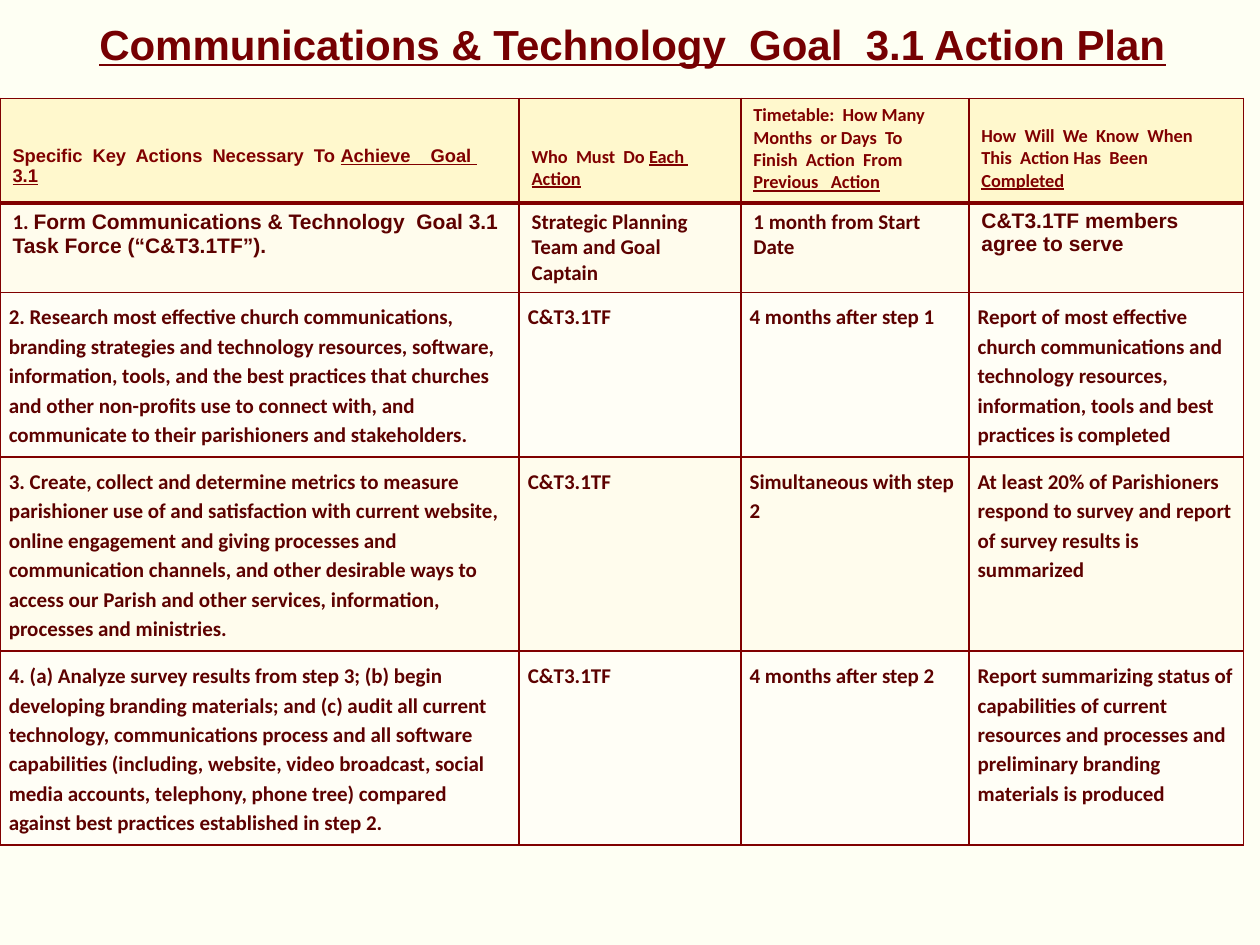
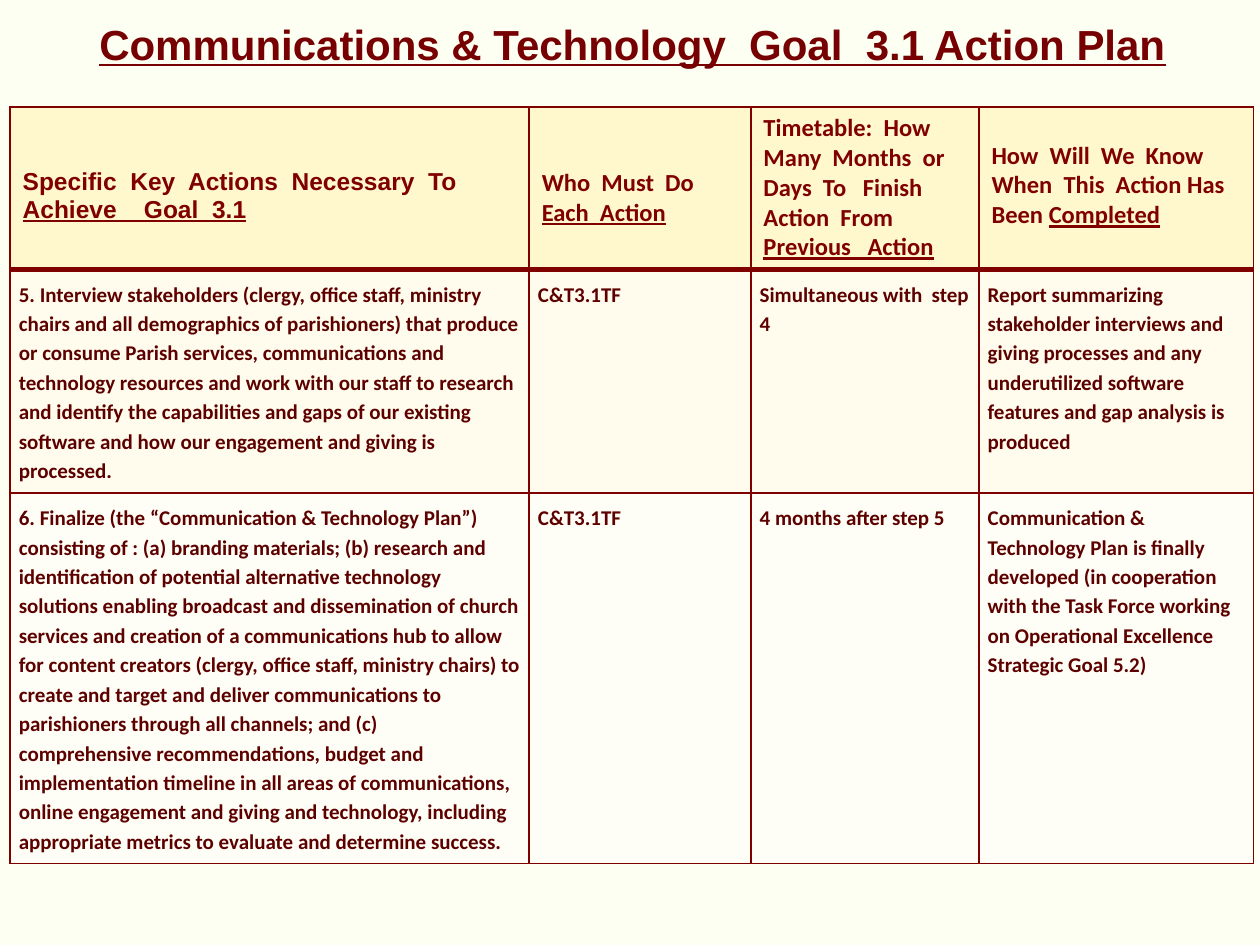
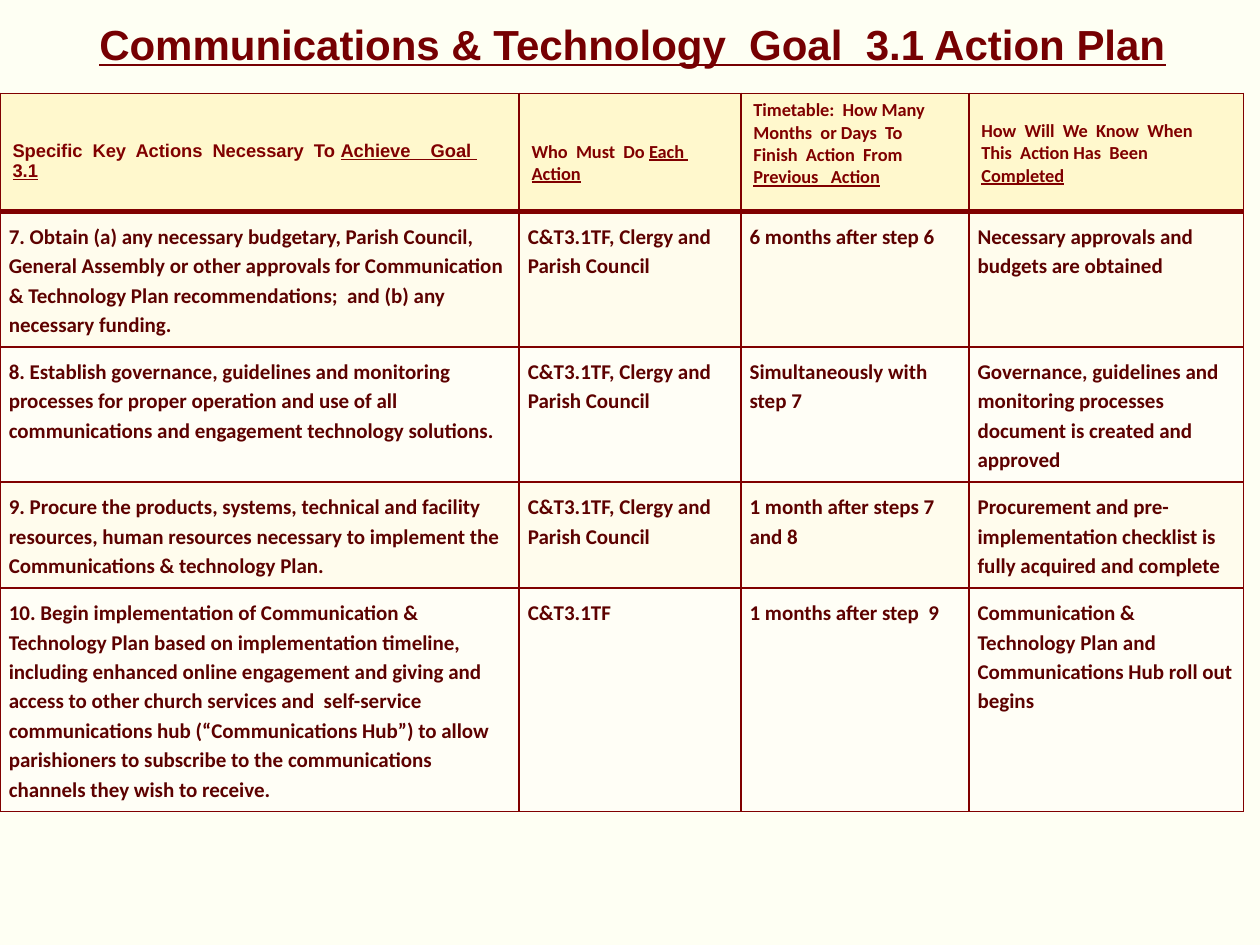
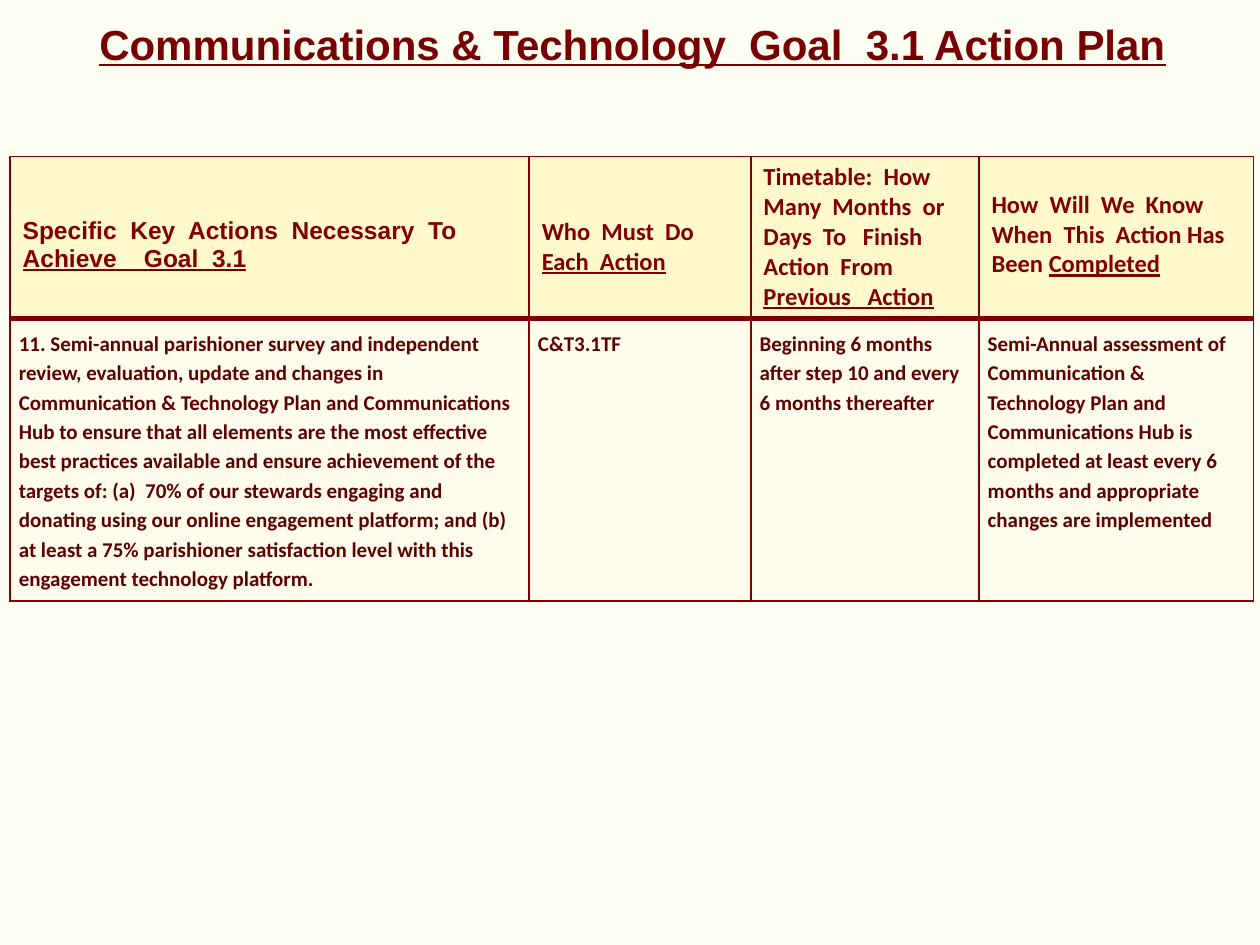
"""Build the four-slide action plan for Communications & Technology Goal 3.1."""
from dataclasses import dataclass

from lxml.etree import SubElement
from pptx import Presentation
from pptx.dml.color import RGBColor
from pptx.enum.text import MSO_ANCHOR, MSO_AUTO_SIZE, PP_ALIGN
from pptx.oxml.ns import qn
from pptx.util import Inches, Pt


@dataclass(frozen=True)
class Theme:
    page: str = "FEFFF3"
    title: str = "760002"
    head: str = "800000"
    text: str = "5D0100"
    line: str = "800000"
    head_fill: str = "FFF8CD"
    bands: tuple = ("FFFCED", "FFFEF6")
    sans: str = "Arial"
    body: str = "Calibri"
    title_size: float = 24
    text_size: float = 12
    small: float = 10.5
    large: float = 14


T = Theme()
TITLE = "Communications & Technology  Goal  3.1 Action Plan"
COLS = (4.12, 1.76, 1.81, 2.18)
ROW = 0.57
PAD = 0.07
TEAM = "C&T3.1TF"
BOARD = "C&T3.1TF, Clergy and Parish Council"

# Each heading: plain words, underlined words, font, lines to drop down
HEADS = [
    ("Specific  Key  Actions  Necessary  To ", "Achieve    Goal  3.1", T.sans, 2),
    ("Who  Must  Do ", "Each  Action", T.body, 2),
    ("Timetable:  How Many  Months  or Days  To   Finish  Action  From ",
     "Previous   Action", T.body, 0),
    ("How  Will  We  Know  When  This  Action Has  Been ", "Completed", T.body, 1),
]

START = [
    [("1. ", T.body),
     ("Form Communications & Technology  Goal 3.1 Task Force (“C&T3.1TF”).", T.sans)],
    [("Strategic Planning Team and Goal Captain", T.body)],
    [("1 month from Start Date", T.body)],
    [("C&T3.1TF members agree to serve", T.sans)],
]

PAGES = [
    {"at": (0, 0.78), "high": 6.71, "head": 0.83, "size": T.small, "rows": [
        START,
        ("2. Research most effective church communications, branding strategies and "
         "technology resources, software, information, tools, and the best practices "
         "that churches and other non-profits use to connect with, and communicate to "
         "their parishioners and stakeholders.",
         TEAM, "4 months after step 1",
         "Report of most effective church communications and technology resources, "
         "information, tools and best practices is completed"),
        ("3. Create, collect and determine metrics to measure parishioner use of and "
         "satisfaction with current website, online engagement and giving processes and "
         "communication channels, and other desirable ways to access our Parish and "
         "other services, information, processes and ministries.",
         TEAM, "Simultaneous with step 2",
         "At least 20% of Parishioners respond to survey and report of survey results "
         "is summarized"),
        ("4. (a) Analyze survey results from step 3; (b) begin developing branding "
         "materials; and (c) audit all current technology, communications process and "
         "all software capabilities (including, website, video broadcast, social media "
         "accounts, telephony, phone tree) compared against best practices established "
         "in step 2.",
         TEAM, "4 months after step 2",
         "Report summarizing status of capabilities of current resources and processes "
         "and preliminary branding materials is produced"),
    ]},
    {"at": (0.08, 0.85), "high": 6.59, "head": 1.29, "size": T.large, "rows": [
        ("5. Interview stakeholders (clergy, office staff, ministry chairs and all "
         "demographics of parishioners) that produce or consume Parish services, "
         "communications and technology resources and work with our staff to research "
         "and identify the capabilities and gaps of our existing software and how our "
         "engagement and giving is processed.",
         TEAM, "Simultaneous with  step 4",
         "Report summarizing stakeholder interviews and giving processes and any "
         "underutilized software features and gap analysis is produced"),
        ("6. Finalize (the “Communication & Technology Plan”) consisting of : (a) "
         "branding materials; (b) research and identification of potential alternative "
         "technology solutions enabling broadcast and dissemination of church services "
         "and creation of a communications hub to allow for content creators (clergy, "
         "office staff, ministry chairs) to create and target and deliver communications "
         "to parishioners through all channels; and (c)  comprehensive recommendations, "
         "budget and implementation timeline in all areas of communications, online "
         "engagement and giving and technology, including appropriate metrics to "
         "evaluate and determine success.",
         TEAM, "4 months after step 5",
         "Communication & Technology Plan is finally developed (in cooperation with the "
         "Task Force working on Operational Excellence Strategic Goal 5.2)"),
    ]},
    {"at": (0, 0.74), "high": 6.25, "head": 0.94, "size": T.small, "rows": [
        ("7. Obtain (a) any necessary budgetary, Parish Council, General Assembly or "
         "other approvals for Communication & Technology Plan recommendations;  and (b) "
         "any necessary funding.",
         BOARD, "6 months after step 6", "Necessary approvals and budgets are obtained"),
        ("8. Establish governance, guidelines and monitoring processes for proper "
         "operation and use of all communications and engagement technology solutions.",
         BOARD, "Simultaneously with step 7",
         "Governance, guidelines and monitoring processes document is created and "
         "approved"),
        ("9. Procure the products, systems, technical and facility resources, human "
         "resources necessary to implement the Communications & technology Plan.",
         BOARD, "1 month after steps 7 and 8",
         "Procurement and pre-implementation checklist is fully acquired and complete"),
        ("10. Begin implementation of Communication & Technology Plan based on "
         "implementation timeline, including enhanced online engagement and giving and "
         "access to other church services and  self-service communications hub "
         "(“Communications Hub”) to allow parishioners to subscribe to the "
         "communications channels they wish to receive.",
         TEAM, "1 months after step  9",
         "Communication & Technology Plan and Communications Hub roll out begins"),
    ]},
    {"at": (0.08, 1.24), "high": 3.71, "head": 1.29, "size": T.large, "rows": [
        ("11. Semi-annual parishioner survey and independent review, evaluation, update "
         "and changes in Communication & Technology Plan and Communications Hub to "
         "ensure that all elements are the most effective best practices available and "
         "ensure achievement of the targets of: (a)  70% of our stewards engaging and "
         "donating using our online engagement platform; and (b) at least a 75% "
         "parishioner satisfaction level with this engagement technology platform.",
         TEAM, "Beginning 6 months after step 10 and every 6 months thereafter",
         "Semi-Annual assessment of Communication & Technology Plan and Communications "
         "Hub is completed at least every 6 months and appropriate changes are "
         "implemented"),
    ]},
]


def style(font, face, size, color):
    font.name, font.size, font.bold = face, Pt(size), True
    font.color.rgb = RGBColor.from_string(color)


def paint(cell, fill, base=1):
    props = cell._tc.get_or_add_tcPr()
    for side, width in (("L", 1), ("R", 1), ("T", 1), ("B", base)):
        line = SubElement(props, qn(f"a:ln{side}"), w=str(Pt(width)))
        solid = SubElement(line, qn("a:solidFill"))
        SubElement(solid, qn("a:srgbClr"), val=T.line)
    cell.fill.solid()
    cell.fill.fore_color.rgb = RGBColor.from_string(fill)


def add_head(cell, head, size):
    plain, under, face, drop = head
    paint(cell, T.head_fill, 3)
    cell.margin_top = Inches(0.05) + Pt(size * 1.12 * drop)
    para = cell.text_frame.paragraphs[0]
    style(para.font, face, size, T.head)
    para.add_run().text = plain
    run = para.add_run()
    run.text = under
    run.font.underline = True


def add_step(cell, item, fill):
    paint(cell, fill)
    para = cell.text_frame.paragraphs[0]
    if isinstance(item, str):
        cell.margin_left = cell.margin_right = Inches(PAD)
        cell.margin_top = cell.margin_bottom = Inches(PAD)
        para.line_spacing = 1.15
        item = [(item, T.body)]
    style(para.font, item[0][1], T.text_size, T.text)
    for words, face in item:
        run = para.add_run()
        run.text = words
        if face != item[0][1]:
            run.font.name = face


def add_title(slide):
    title = slide.shapes.title
    title.left, title.top = Inches(0.64), Inches(-0.23)
    title.width, title.height = Inches(8.76), Inches(1.25)
    frame = title.text_frame
    frame.text = TITLE
    frame.word_wrap = True
    frame.auto_size = MSO_AUTO_SIZE.NONE
    frame.vertical_anchor = MSO_ANCHOR.MIDDLE
    para = frame.paragraphs[0]
    para.alignment, para.line_spacing = PP_ALIGN.CENTER, 0.7
    style(para.font, T.sans, T.title_size, T.title)
    para.font.underline = True


def add_plan(slide, page):
    rows = page["rows"]
    left, top = page["at"]
    shape = slide.shapes.add_table(
        len(rows) + 1, len(COLS), Inches(left), Inches(top),
        Inches(sum(COLS)), Inches(page["high"]))
    table = shape.table
    table.horz_banding = False
    for col, width in zip(table.columns, COLS):
        col.width = Inches(width)
    for row, high in zip(table.rows, [page["head"]] + [ROW] * len(rows)):
        row.height = Inches(high)
    shape.height = Inches(page["high"])
    for col, head in enumerate(HEADS):
        add_head(table.cell(0, col), head, page["size"])
    for num, row in enumerate(rows):
        for col, item in enumerate(row):
            add_step(table.cell(num + 1, col), item, T.bands[num % 2])


def main():
    deck = Presentation()
    deck.slide_width, deck.slide_height = Inches(10), Inches(7.5)
    back = deck.slide_master.background.fill
    back.solid()
    back.fore_color.rgb = RGBColor.from_string(T.page)
    for page in PAGES:
        slide = deck.slides.add_slide(deck.slide_layouts[5])
        add_title(slide)
        add_plan(slide, page)
    deck.save("out.pptx")


if __name__ == "__main__":
    main()
